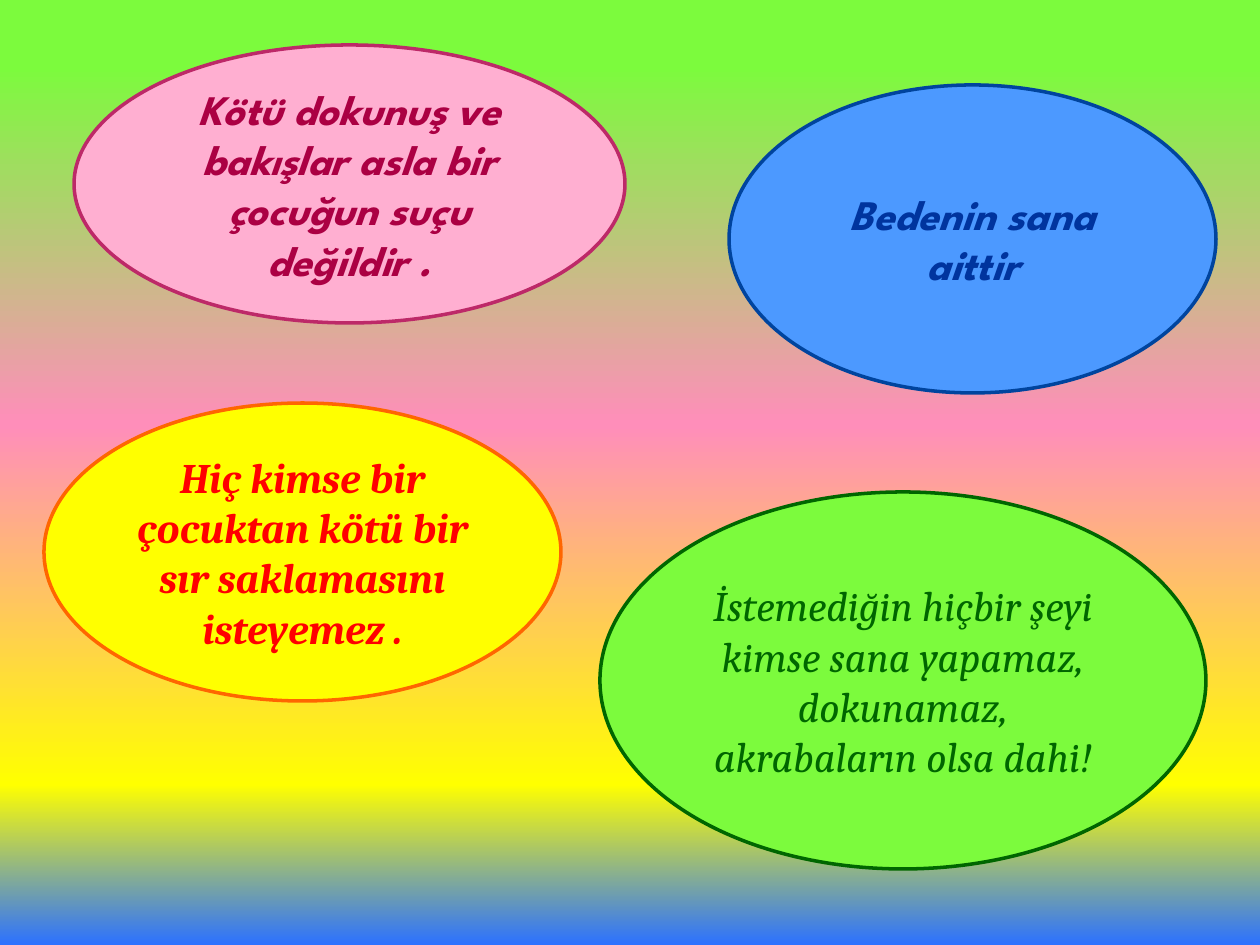
"""Build a slide of four coloured ovals with messages for children about body safety."""
import copy

import pptx
import pptx.dml.color
import pptx.enum.shapes
import pptx.enum.text
import pptx.oxml.ns
import pptx.util

SCALE = 914400 / 126


def px(n):
    return pptx.util.Emu(round(n * SCALE))


def color(code):
    return pptx.dml.color.RGBColor.from_string(code)


class Page:
    def __init__(self, deck):
        self.size = pptx.util.Pt(24)
        self.line = pptx.util.Pt(2)
        self.slide = deck.slides.add_slide(deck.slide_layouts[6])

    def backdrop(self, stops):
        fill = self.slide.background.fill
        fill.gradient()
        fill.gradient_angle = 270
        items = self.slide.element.find(".//" + pptx.oxml.ns.qn("a:gsLst"))
        while len(items) < len(stops):
            items.append(copy.deepcopy(items[0]))
        for stop, (place, code) in zip(fill.gradient_stops, stops):
            stop.position = place / 100
            stop.color.rgb = color(code)

    def oval(self, box, fill, edge, text, ink, font, bold):
        kind = pptx.enum.shapes.MSO_SHAPE.OVAL
        shape = self.slide.shapes.add_shape(kind, *map(px, box))
        shape.shadow.inherit = False
        shape.fill.solid()
        shape.fill.fore_color.rgb = color(fill)
        shape.line.color.rgb = color(edge)
        shape.line.width = self.line
        frame = shape.text_frame
        frame.word_wrap = True
        frame.vertical_anchor = pptx.enum.text.MSO_ANCHOR.MIDDLE
        para = frame.paragraphs[0]
        para.alignment = pptx.enum.text.PP_ALIGN.CENTER
        run = para.add_run()
        run.text = text
        run.font.name = font
        run.font.size = self.size
        run.font.bold = bold
        run.font.italic = True
        run.font.color.rgb = color(ink)


def main():
    deck = pptx.Presentation()
    deck.slide_width, deck.slide_height = px(1260), px(945)
    page = Page(deck)
    page.backdrop([(7, "7CFB3D"), (45, "FF8EBA"), (83, "FFFF00"), (100, "2C71FF")])
    page.oval((74, 45, 551, 278), "FFAFD1", "BD2968",
              "Kötü dokunuş ve bakışlar asla bir çocuğun suçu değildir .",
              "AB0043", "League Spartan", True)
    page.oval((729, 85, 487, 308), "4C99FF", "00449E",
              "Bedenin sana aittir", "00349E", "League Spartan", True)
    page.oval((44, 403, 517, 298), "FFFF00", "FF6600",
              "Hiç kimse bir çocuktan kötü bir sır saklamasını isteyemez .",
              "FF0000", "Cambria", True)
    page.oval((600, 492, 606, 377), "7CFB3D", "006600",
              "İstemediğin hiçbir şeyi kimse sana yapamaz, dokunamaz, "
              "akrabaların olsa dahi!", "006600", "Cambria", False)
    deck.save("out.pptx")


if __name__ == "__main__":
    main()
